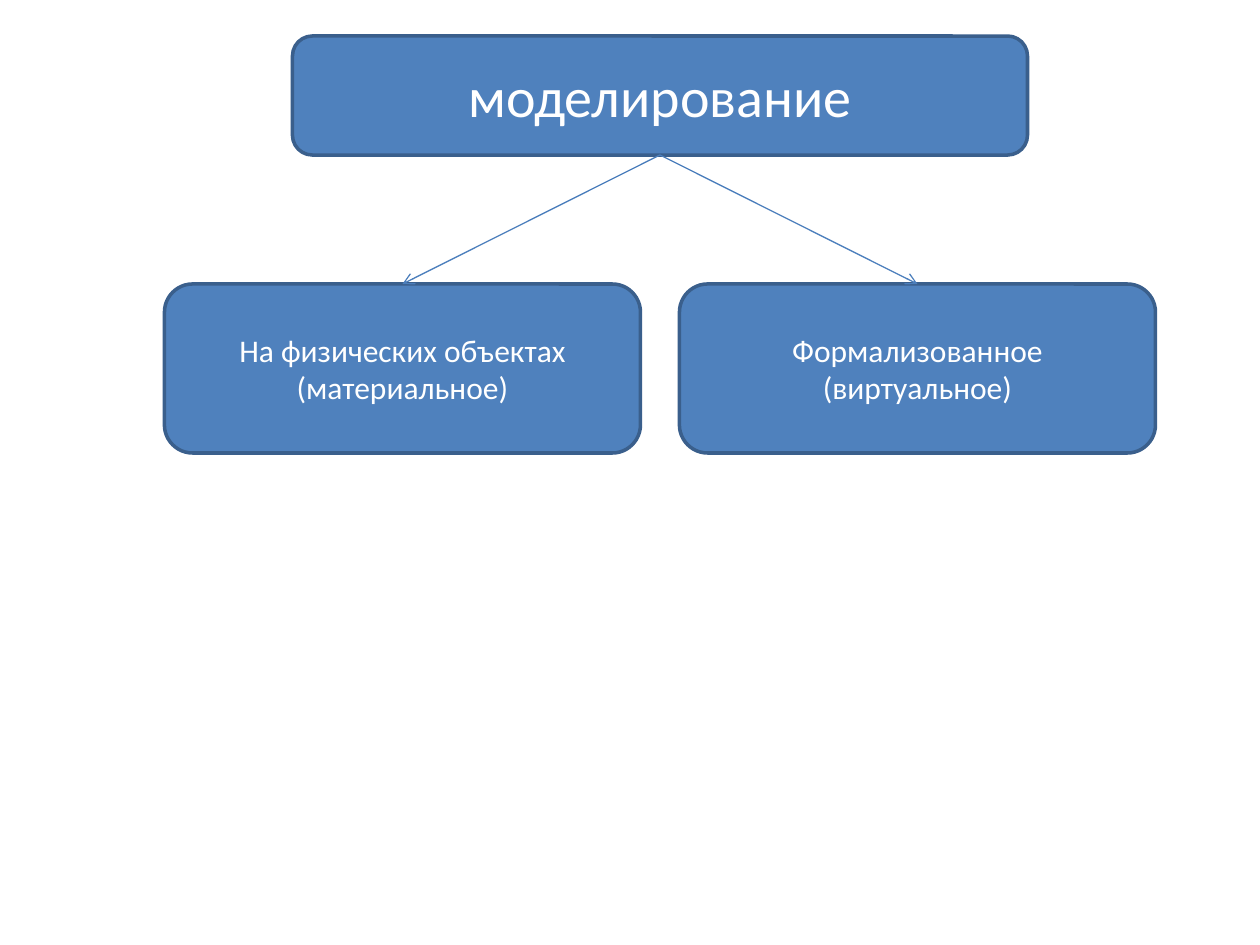
from lxml import etree
from pptx import Presentation
from pptx import util as u
from pptx.dml.color import RGBColor
from pptx.enum import shapes, text
from pptx.oxml.ns import qn

PX = u.Inches(1) / 126
BLUE = RGBColor(0x4F, 0x81, 0xBD)
BORDER = RGBColor(0x3A, 0x5F, 0x8C)
ARROW = RGBColor(0x4B, 0x7E, 0xBC)
WHITE = RGBColor(0xFF, 0xFF, 0xFF)

ROOT = "моделирование"
KINDS = ["На физических объектах (материальное)", "Формализованное (виртуальное)"]

CENTER = 660
ROOT_TOP, ROOT_WIDTH, ROOT_HEIGHT = 36, 735, 119
KIND_TOP, KIND_WIDTH, KIND_HEIGHT = 284, 476, 169
KIND_STEP = 515
TOP_SIDE, BOTTOM_SIDE = 0, 2


def px(length):
    return u.Emu(round(length * PX))


def add_box(slide, caption, center, top, width, height, size):
    box = slide.shapes.add_shape(
        shapes.MSO_SHAPE.ROUNDED_RECTANGLE,
        px(center - width / 2), px(top), px(width), px(height))
    box.shadow.inherit = False
    box.fill.solid()
    box.fill.fore_color.rgb = BLUE
    box.line.color.rgb = BORDER
    box.line.width = u.Pt(2)
    frame = box.text_frame
    frame.word_wrap = True
    frame.vertical_anchor = text.MSO_ANCHOR.MIDDLE
    frame.text = caption
    paragraph = frame.paragraphs[0]
    paragraph.alignment = text.PP_ALIGN.CENTER
    paragraph.font.name = "Calibri"
    paragraph.font.size = u.Pt(size)
    paragraph.font.color.rgb = WHITE
    return box


def add_arrow(slide, parent, child):
    arrow = slide.shapes.add_connector(shapes.MSO_CONNECTOR.STRAIGHT, 0, 0, 0, 0)
    arrow.begin_connect(parent, BOTTOM_SIDE)
    arrow.end_connect(child, TOP_SIDE)
    arrow.line.color.rgb = ARROW
    arrow.line.width = u.Pt(0.75)
    etree.SubElement(arrow.line._get_or_add_ln(), qn("a:tailEnd"), type="arrow")
    etree.SubElement(arrow._element.spPr, qn("a:effectLst"))


def main():
    deck = Presentation()
    deck.slide_width, deck.slide_height = px(1260), px(945)
    slide = deck.slides.add_slide(deck.slide_layouts[6])

    root = add_box(slide, ROOT, CENTER, ROOT_TOP, ROOT_WIDTH, ROOT_HEIGHT, 32)
    first_center = CENTER - KIND_STEP * (len(KINDS) - 1) / 2
    for i, caption in enumerate(KINDS):
        kind = add_box(slide, caption, first_center + i * KIND_STEP,
                       KIND_TOP, KIND_WIDTH, KIND_HEIGHT, 18)
        add_arrow(slide, root, kind)

    deck.save("out.pptx")


if __name__ == "__main__":
    main()
